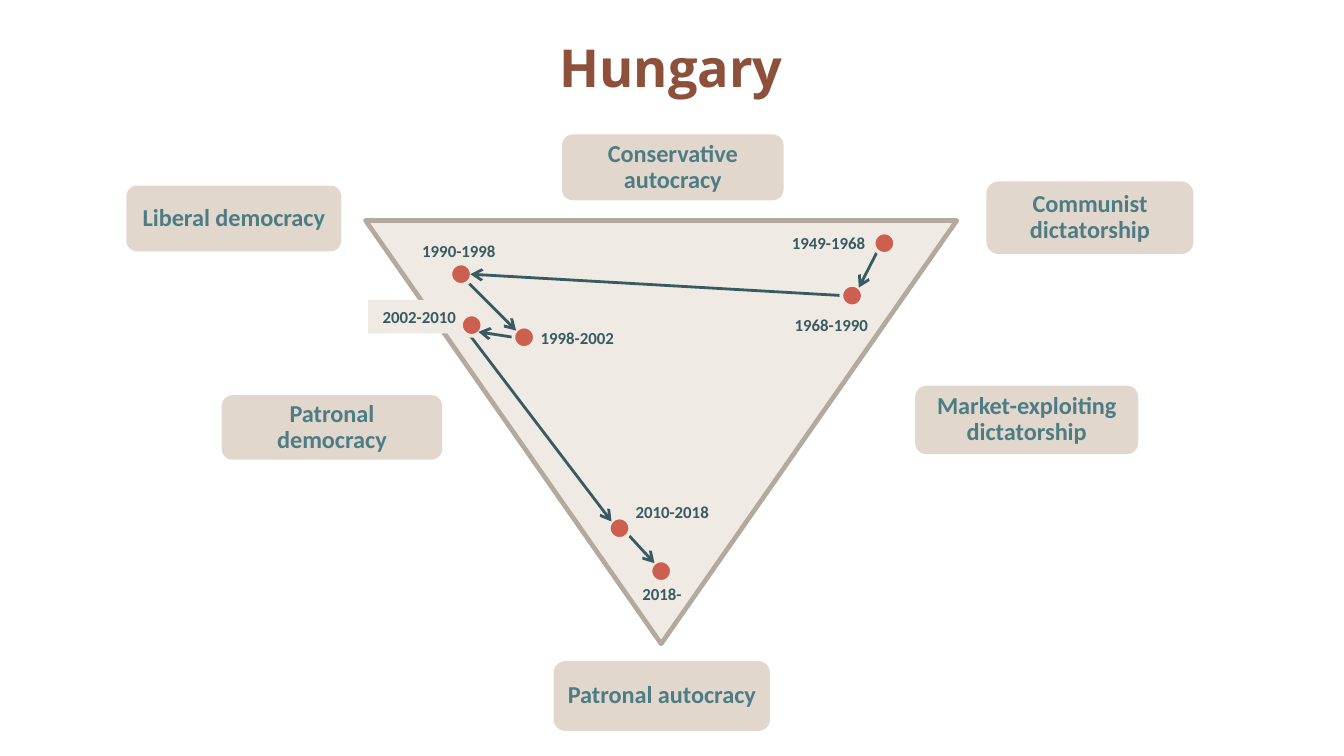
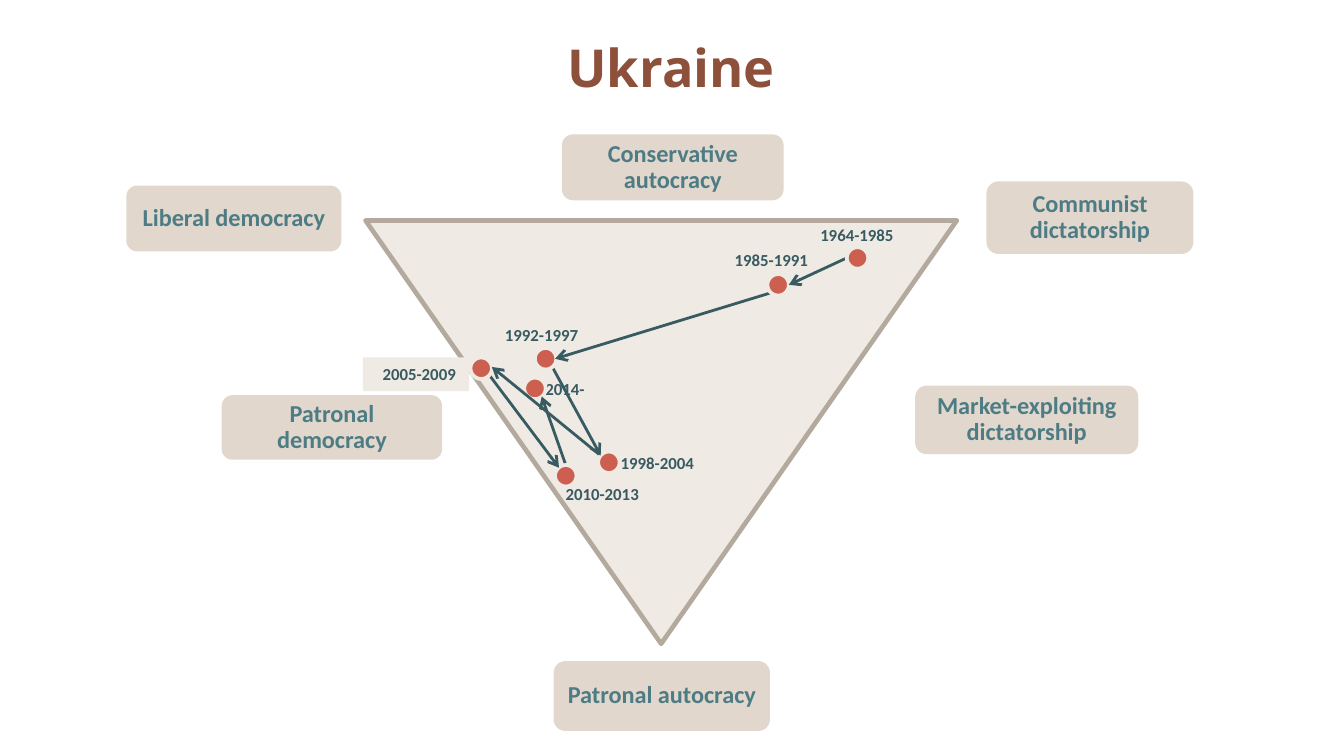
from pptx import Presentation
from pptx.dml.color import RGBColor
from pptx.enum.shapes import MSO_CONNECTOR as Link, MSO_SHAPE as Form
from pptx.enum.text import MSO_ANCHOR as Anchor, PP_ALIGN as Align
from pptx.oxml.ns import qn
from pptx.util import Pt
from lxml.etree import SubElement as Sub

RUST = RGBColor(0x8D, 0x50, 0x3B)
TEAL = RGBColor(0x4D, 0x7C, 0x85)
DEEP = RGBColor(0x38, 0x5A, 0x61)
SAND = RGBColor(0xEF, 0xEA, 0xE4)
EDGE = RGBColor(0xB3, 0xA9, 0x9D)
TAN = RGBColor(0xC7, 0xB0, 0x9A)
RED = RGBColor(0xCD, 0x5F, 0x50)

HEAD = dict(name="Open Sans", size=Pt(28), bold=True)
TYPE = dict(name="Calibri", size=Pt(13), bold=True)
YEAR = dict(name="Calibri", size=Pt(9), bold=True)
LEFT, MID, RIGHT = Align.LEFT, Align.CENTER, Align.RIGHT
DOT = 11.5
TALL = 18  # height of a year label

# Regime types around the triangle: text, (left, top, width, height)
TYPES = [
    ("Communist dictatorship", (528.5, 97.2, 110.9, 38.9)),
    ("Liberal democracy", (67.7, 99.4, 115.2, 35.3)),
    ("Patronal autocracy", (296.6, 354.2, 115.9, 37.4)),
    ("Conservative autocracy", (301, 72, 118.8, 35.3)),
    ("Market-exploiting dictatorship", (490.3, 206.6, 119.5, 36.7)),
    ("Patronal democracy", (118.8, 211.7, 118.1, 34.6)),
]

# Stages in time: years, dot centre, label (left, top, width), alignment,
# label fill, arrow to the next stage (from x, y, to x, y)
PATHS = {
    "Hungary": [
        ("1949-1968", (473.8, 130.3), (415.4, 121, 56.9), MID, None,
         (472.3, 130.3, 460.1, 154.1)),
        ("1968-1990", (456.5, 158.4), (416.9, 164.9, 56.9), MID, None,
         (452.2, 158.4, 252, 146.9)),
        ("1990-1998", (247, 146.9), (217.4, 125.3, 56.9), MID, None,
         (250.6, 151.2, 276.5, 177.1)),
        ("1998-2002", (280.8, 180.7), (280.8, 172.1, 56.9), MID, None,
         (275, 180.7, 256.3, 177.8)),
        ("2002-2010", (252.7, 174.2), (197.3, 160.6, 54.7), MID, SAND,
         (252, 180, 327.6, 279.4)),
        ("2010-2018", (331.9, 283), (333.4, 265, 54.7), LEFT, None,
         (333.4, 283, 350.6, 301.7)),
        ("2018-", (354.2, 306), (334.8, 308.9, 39.6), MID, None, None),
    ],
    "Ukraine": [
        ("1964-1985", (459.4, 138.2), (430.6, 116.6, 56.9), MID, None,
         (453.6, 138.2, 422.6, 152.6)),
        ("1985-1991", (416.9, 152.6), (385.2, 130.3, 54.7), RIGHT, None,
         (412.6, 157, 297.4, 192.2)),
        ("1992-1997", (292.3, 192.2), (262.8, 170.6, 54.7), MID, None,
         (295.9, 196.6, 321.8, 244.1)),
        ("1998-2004", (326.2, 247.7), (325.4, 239, 56.9), LEFT, None,
         (321.8, 244.1, 263.5, 196.6)),
        ("2005-2009", (257.8, 197.3), (194.4, 191.5, 56.9), RIGHT, SAND,
         (262.1, 200.9, 299.5, 250.6)),
        ("2010-2013", (303.1, 254.9), (295.9, 255.6, 54.7), LEFT, None,
         (303.1, 249.1, 290.2, 212.4)),
        ("2014-", (286.6, 208.1), (285.1, 199.4, 36), LEFT, None, None),
    ],
}


def pts(vals):
    return [Pt(v) for v in vals]


def write(item, text, look, ink, align=MID):
    frame = item.text_frame
    frame.text = text
    frame.word_wrap = True
    para = frame.paragraphs[0]
    para.alignment = align
    for key, val in look.items():
        setattr(para.font, key, val)
    para.font.color.rgb = ink
    return frame


def shape(slide, form, area, fill, line=None, wide=0):
    item = slide.shapes.add_shape(form, *pts(area))
    item.shadow.inherit = False
    item.fill.solid()
    item.fill.fore_color.rgb = fill
    if line is None:
        item.line.fill.background()
    else:
        item.line.color.rgb = line
        item.line.width = Pt(wide)
    return item


def arrow(slide, ends):
    item = slide.shapes.add_connector(Link.STRAIGHT, *pts(ends))
    item.line.color.rgb = DEEP
    item.line.width = Pt(1.5)
    Sub(item.line._get_or_add_ln(), qn("a:tailEnd"), type="arrow")
    Sub(item._element.spPr, qn("a:effectLst"))


def title(slide, text):
    item = slide.shapes.title
    item.left, item.top, item.width, item.height = pts((8, 0, 703, 71.5))
    write(item, text, HEAD, RUST).vertical_anchor = Anchor.MIDDLE


def field(slide):
    # Triangle with the regime types around it
    area = (195.8, 118.1, 316.8, 226.8)
    shape(slide, Form.ISOSCELES_TRIANGLE, area, SAND, EDGE, 2.5).rotation = 180
    for text, area in TYPES:
        box = shape(slide, Form.ROUNDED_RECTANGLE, area, TAN)
        tint = box._element.spPr.find(qn("a:solidFill"))[0]
        Sub(tint, qn("a:alpha"), val="50000")
        frame = write(box, text, TYPE, TEAL)
        frame.vertical_anchor = Anchor.MIDDLE
        frame.paragraphs[0].line_spacing = 0.9
        for side in ("left", "right", "top", "bottom"):
            setattr(frame, "margin_" + side, Pt(4))


def track(slide, steps):
    # Year labels
    for text, _, spot, align, fill, _ in steps:
        area = (*spot, TALL)
        if fill is None:
            box = slide.shapes.add_textbox(*pts(area))
        else:
            box = shape(slide, Form.RECTANGLE, area, fill)
        write(box, text, YEAR, DEEP, align).vertical_anchor = Anchor.TOP

    # Dots and arrows, latest first, so each dot covers its arrow's start
    for _, (x, y), _, _, _, ends in reversed(steps):
        if ends:
            arrow(slide, ends)
        area = (x - DOT / 2, y - DOT / 2, DOT, DOT)
        shape(slide, Form.OVAL, area, RED, SAND, 2)


def main():
    deck = Presentation()
    deck.slide_width, deck.slide_height = Pt(720), Pt(405)
    for land, steps in PATHS.items():
        slide = deck.slides.add_slide(deck.slide_layouts[5])
        field(slide)
        title(slide, land)
        track(slide, steps)
    deck.save("out.pptx")


if __name__ == "__main__":
    main()
